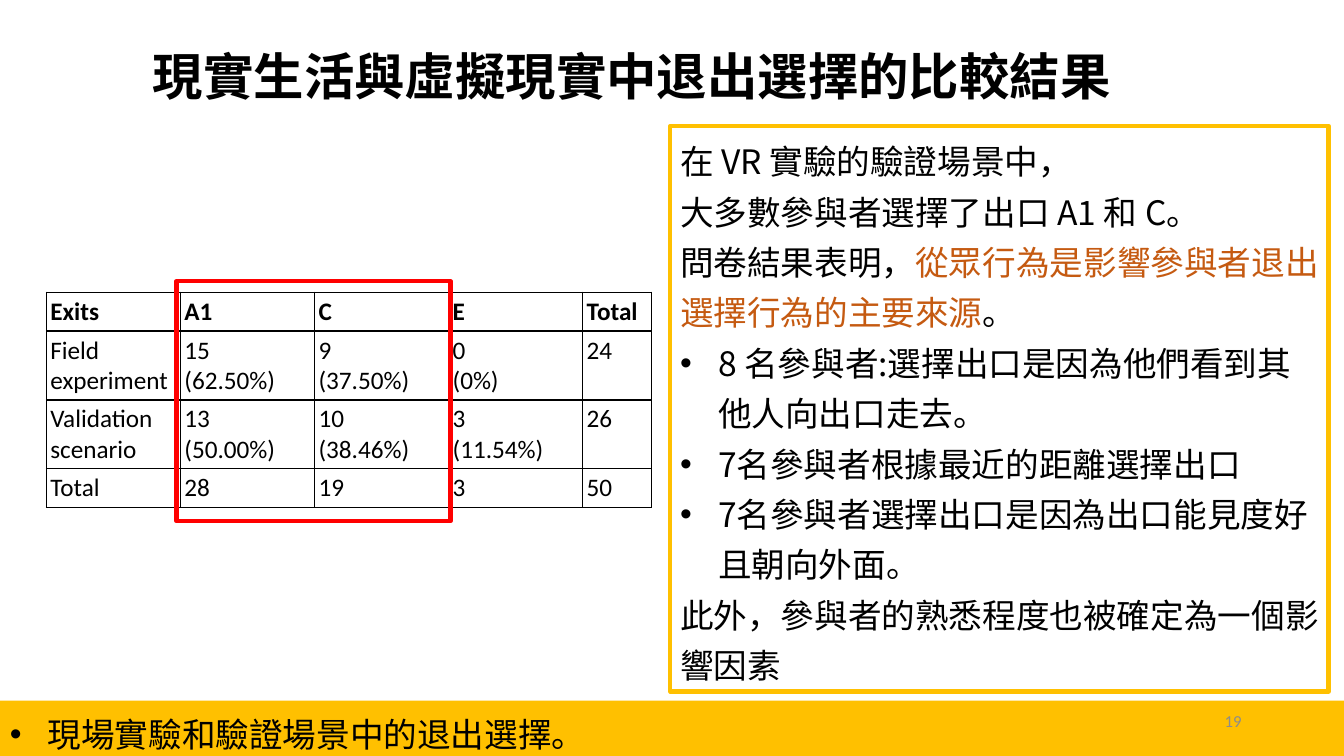
from lxml import etree
from pptx import Presentation
from pptx.dml.color import RGBColor
from pptx.enum.shapes import MSO_SHAPE
from pptx.enum.text import MSO_ANCHOR, PP_ALIGN
from pptx.oxml.ns import qn
from pptx.util import Pt

COLORS = {"black": "000000", "gold": "FFC000", "red": "FF0000",
          "orange": "C55A11", "gray": "8C8C8C"}
CHINESE_FONT = "Noto Sans CJK SC"
TABLE_FONT = "Calibri"

TITLE = "現實生活與虛擬現實中退出選擇的比較結果"
CAPTION = "現場實驗和驗證場景中的退出選擇。"
PAGE_NUMBER = "19"

# Each finding: is it bulleted, then its (text, color) runs
FINDINGS = [
    (False, [("在 VR 實驗的驗證場景中，", "black")]),
    (False, [("大多數參與者選擇了出口 A1 和 C。", "black")]),
    (False, [("問卷結果表明，", "black"),
             ("從眾行為是影響參與者退出選擇行為的主要來源", "orange"),
             ("。", "black")]),
    (True, [("8 名參與者:選擇出口是因為他們看到其他人向出口走去。", "black")]),
    (True, [("7名參與者根據最近的距離選擇出口", "black")]),
    (True, [("7名參與者選擇出口是因為出口能見度好且朝向外面。", "black")]),
    (False, [("此外，參與者的熟悉程度也被確定為一個影響因素", "black")]),
]

EXIT_ROWS = [
    ("Exits", "A1", "C", "E", "Total"),
    ("Field experiment", "15\v(62.50%)", "9\v(37.50%)", "0\v(0%)", "24"),
    ("Validation scenario", "13\v(50.00%)", "10\v(38.46%)", "3\v(11.54%)", "26"),
    ("Total", "28", "19", "3", "50"),
]
COLUMN_WIDTHS = [95.8] * 4 + [48.9]
ROW_HEIGHTS = [27.7, 49.2, 49.2, 27.7]
CELL_MARGIN = 2.88

# left, top, width, height
BAR_BOX = (-1.5, 500.4, 962, 39.6)
NUMBER_BOX = (678, 500.4, 216, 28.8)
TITLE_BOX = (58.5, 30.3, 785.5, 49.5)
CAPTION_BOX = (0, 500.4, 430, 38.9)
FINDINGS_BOX = (478.8, 90, 470.2, 404)
TABLE_CORNER = (33.1, 208.8)
HIGHLIGHT_BOX = (126, 200.9, 195.8, 171.4)


def color(name):
    return RGBColor.from_string(COLORS[name])


def style_run(run, font_name, size, color_name, bold=False):
    font = run.font
    font.name, font.size, font.bold = font_name, Pt(size), bold
    font.color.rgb = color(color_name)
    east_asian = etree.SubElement(run._r.get_or_add_rPr(), qn("a:ea"))
    east_asian.set("typeface", font_name)


def add_bullet(paragraph):
    properties = paragraph._p.get_or_add_pPr()
    properties.set("marL", str(Pt(27)))
    properties.set("indent", str(-Pt(27)))
    etree.SubElement(properties, qn("a:buFont")).set("typeface", "Arial")
    etree.SubElement(properties, qn("a:buChar")).set("char", "•")


def add_rectangle(slide, box, fill=None, line=None):
    shape = slide.shapes.add_shape(MSO_SHAPE.RECTANGLE, *map(Pt, box))
    shape.shadow.inherit = False
    if fill:
        shape.fill.solid()
        shape.fill.fore_color.rgb = color(fill)
    else:
        shape.fill.background()
    if line:
        shape.line.color.rgb = color(line)
        shape.line.width = Pt(3)
    else:
        shape.line.fill.background()
    return shape


def add_label(slide, box, text, font_name, size, color_name, anchor,
              alignment=PP_ALIGN.LEFT, bold=False, wrap=True):
    frame = slide.shapes.add_textbox(*map(Pt, box)).text_frame
    frame.word_wrap = wrap
    frame.vertical_anchor = anchor
    frame.text = text
    paragraph = frame.paragraphs[0]
    paragraph.alignment = alignment
    style_run(paragraph.runs[0], font_name, size, color_name, bold)
    return paragraph


def add_findings(slide):
    frame = add_rectangle(slide, FINDINGS_BOX, line="gold").text_frame
    frame.word_wrap = True
    frame.vertical_anchor = MSO_ANCHOR.TOP
    for index, (bulleted, runs) in enumerate(FINDINGS):
        paragraph = frame.add_paragraph() if index else frame.paragraphs[0]
        if bulleted:
            add_bullet(paragraph)
        paragraph.alignment = PP_ALIGN.LEFT
        paragraph.line_spacing = 1.25
        for text, color_name in runs:
            run = paragraph.add_run()
            run.text = text
            style_run(run, CHINESE_FONT, 24, color_name)


def add_cell_borders(cell):
    properties = cell._tc.get_or_add_tcPr()
    for side in ("lnL", "lnR", "lnT", "lnB"):
        border = etree.SubElement(properties, qn(f"a:{side}"), w=str(Pt(1)))
        fill = etree.SubElement(border, qn("a:solidFill"))
        etree.SubElement(fill, qn("a:srgbClr"), val=COLORS["black"])


def add_exit_table(slide):
    table = slide.shapes.add_table(
        len(EXIT_ROWS), len(COLUMN_WIDTHS), *map(Pt, TABLE_CORNER),
        Pt(sum(COLUMN_WIDTHS)), Pt(sum(ROW_HEIGHTS))).table
    table.first_row = table.horz_banding = False
    for column, width in zip(table.columns, COLUMN_WIDTHS):
        column.width = Pt(width)
    for row_index, (row, height) in enumerate(zip(table.rows, ROW_HEIGHTS)):
        row.height = Pt(height)
        for cell, text in zip(row.cells, EXIT_ROWS[row_index]):
            cell.margin_left = cell.margin_right = Pt(CELL_MARGIN)
            cell.margin_top = cell.margin_bottom = Pt(CELL_MARGIN)
            add_cell_borders(cell)
            cell.fill.background()
            cell.text_frame.text = text
            for run in cell.text_frame.paragraphs[0].runs:
                style_run(run, TABLE_FONT, 18, "black", bold=row_index == 0)


def main():
    presentation = Presentation()
    presentation.slide_width, presentation.slide_height = Pt(960), Pt(540)
    slide = presentation.slides.add_slide(presentation.slide_layouts[6])

    add_rectangle(slide, BAR_BOX, fill="gold")
    add_label(slide, NUMBER_BOX, PAGE_NUMBER, TABLE_FONT, 12, "gray",
              MSO_ANCHOR.MIDDLE, PP_ALIGN.RIGHT)
    title = add_label(slide, TITLE_BOX, TITLE, CHINESE_FONT, 36, "black",
                      MSO_ANCHOR.BOTTOM, PP_ALIGN.CENTER, bold=True)
    title.line_spacing = 0.9
    caption = add_label(slide, CAPTION_BOX, CAPTION, CHINESE_FONT, 24, "black",
                        MSO_ANCHOR.TOP, wrap=False)
    add_bullet(caption)
    caption.line_spacing = 1.2
    add_findings(slide)
    add_exit_table(slide)
    add_rectangle(slide, HIGHLIGHT_BOX, line="red")

    presentation.save("out.pptx")


if __name__ == "__main__":
    main()
